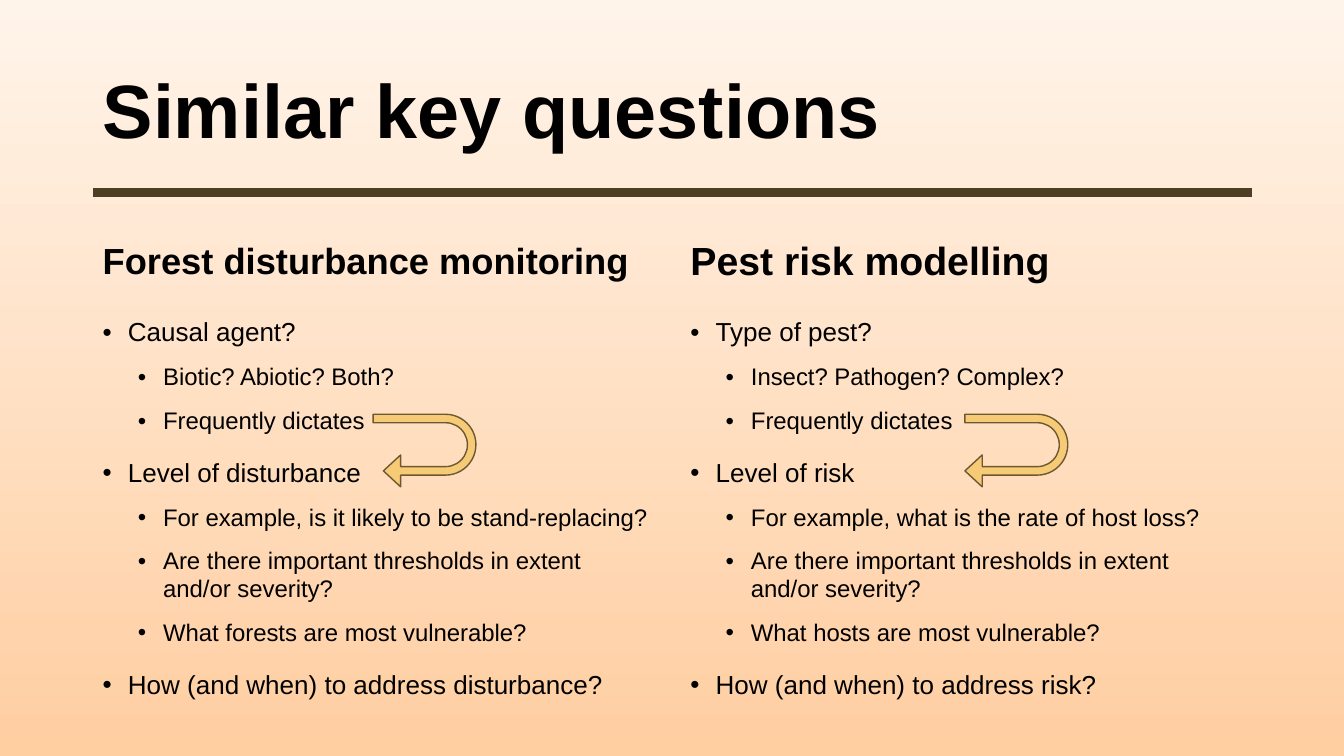
from lxml import etree
from pptx import Presentation
from pptx.dml.color import RGBColor
from pptx.enum.shapes import MSO_CONNECTOR as Connector, MSO_SHAPE as Shape
from pptx.enum.text import MSO_ANCHOR as Anchor
from pptx.oxml.ns import qn
from pptx.util import Inches, Pt

HEADING = {"line_spacing": 1.14, "space_before": Pt(10), "space_after": Pt(6)}
# Bullet formats by level: text size, left margin in inches, paragraph format
LEVELS = [
    (18.6, 0.25, {"level": 0, "line_spacing": 0.98, "space_before": Pt(10), "space_after": Pt(6)}),
    (17.1, 0.6, {"level": 1, "line_spacing": 0.98, "space_before": Pt(5), "space_after": Pt(6)}),
]

COLUMNS = [
    {"left": 0.92, "heading": "Forest disturbance monitoring", "size": 25.9,
     "arrow_left": 3.85, "arrow_end": 0.9,
     "bullets": [
         (0, "Causal agent?"),
         (1, "Biotic? Abiotic? Both?"),
         (1, "Frequently dictates"),
         (0, "Level of disturbance"),
         (1, "For example, is it likely to be stand-replacing?"),
         (1, "Are there important thresholds in extent and/or severity?"),
         (1, "What forests are most vulnerable?"),
         (0, "How (and when) to address disturbance?")]},
    {"left": 6.75, "heading": "Pest risk modelling", "size": 28,
     "arrow_left": 9.72, "arrow_end": 1,
     "bullets": [
         (0, "Type of pest?"),
         (1, "Insect? Pathogen? Complex?"),
         (1, "Frequently dictates"),
         (0, "Level of risk"),
         (1, "For example, what is the rate of host loss?"),
         (1, "Are there important thresholds in extent and/or severity?"),
         (1, "What hosts are most vulnerable?"),
         (0, "How (and when) to address risk?")]},
]


def color(value):
    return RGBColor.from_string(value)


def set_format(target, values):
    for name, value in values.items():
        setattr(target, name, value)


def add_frame(page, left, top, width, height, anchor=Anchor.TOP):
    box = page.shapes.add_textbox(Inches(left), Inches(top), Inches(width), Inches(height))
    set_format(box.text_frame, {"word_wrap": True, "vertical_anchor": anchor})
    return box.text_frame


def write(para, text, size, values, bold=False):
    set_format(para, values)
    span = para.add_run()
    span.text = text
    set_format(span.font, {"name": "Arial", "size": Pt(size), "bold": bold})
    span.font.color.rgb = color("000000")


def add_bullet(para, margin):
    props = para._p.get_or_add_pPr()
    props.set("marL", str(Inches(margin)))
    props.set("indent", str(Inches(-0.25)))
    etree.SubElement(props, qn("a:buFont")).set("typeface", "Arial")
    etree.SubElement(props, qn("a:buChar")).set("char", "•")


def add_background(page):
    fill = page.background.fill
    fill.gradient()
    fill.gradient_angle = 270
    for stop, position, value in zip(fill.gradient_stops, (0, 1), ("FFF4EA", "FFCEA1")):
        stop.position = position
        stop.color.rgb = color(value)


def add_header(page, left, top, width):
    # Title
    title = add_frame(page, left, top, width, 1.08)
    write(title.paragraphs[0], "Similar key questions", 54, {"line_spacing": 0.9}, bold=True)
    # Rule below the title
    rule_y = Inches(top + 1.23)
    rule = page.shapes.add_connector(
        Connector.STRAIGHT, Inches(left + width), rule_y, Inches(left), rule_y)
    rule.line.color.rgb = color("4C3F24")
    rule.line.width = Pt(6)
    etree.SubElement(rule._element.spPr, qn("a:effectLst"))


def add_column(page, column, top, width):
    # Heading
    left = column["left"]
    heading = add_frame(page, left, top, width, 0.9, Anchor.MIDDLE)
    write(heading.paragraphs[0], column["heading"], column["size"], HEADING, bold=True)
    # Bulleted questions
    body = add_frame(page, left, top + 1, width, 3.89)
    for index, (level, text) in enumerate(column["bullets"]):
        para = body.add_paragraph() if index else body.paragraphs[0]
        size, margin, values = LEVELS[level]
        write(para, text, size, values)
        add_bullet(para, margin)


def add_turn_arrow(page, left, top, end):
    arrow = page.shapes.add_shape(
        Shape.U_TURN_ARROW, Inches(left), Inches(top), Inches(0.72), Inches(1.02))
    arrow.rotation = 90
    arrow.shadow.inherit = False
    for index, value in enumerate((0.117, 0.22, 0.238, 0.438, end)):
        arrow.adjustments[index] = value
    arrow.fill.solid()
    arrow.fill.fore_color.rgb = color("F7CA76")
    arrow.line.color.rgb = color("6C5934")
    arrow.line.width = Pt(1)


def main():
    deck = Presentation()
    set_format(deck, {"slide_width": Inches(13.33), "slide_height": Inches(7.5)})
    page = deck.slides.add_slide(deck.slide_layouts[6])
    add_background(page)
    add_header(page, 0.92, 0.68, 11.5)
    for column in COLUMNS:
        add_column(page, column, 2.1, 5.64)
        add_turn_arrow(page, column["arrow_left"], 3.96, column["arrow_end"])
    deck.save("out.pptx")


if __name__ == "__main__":
    main()
